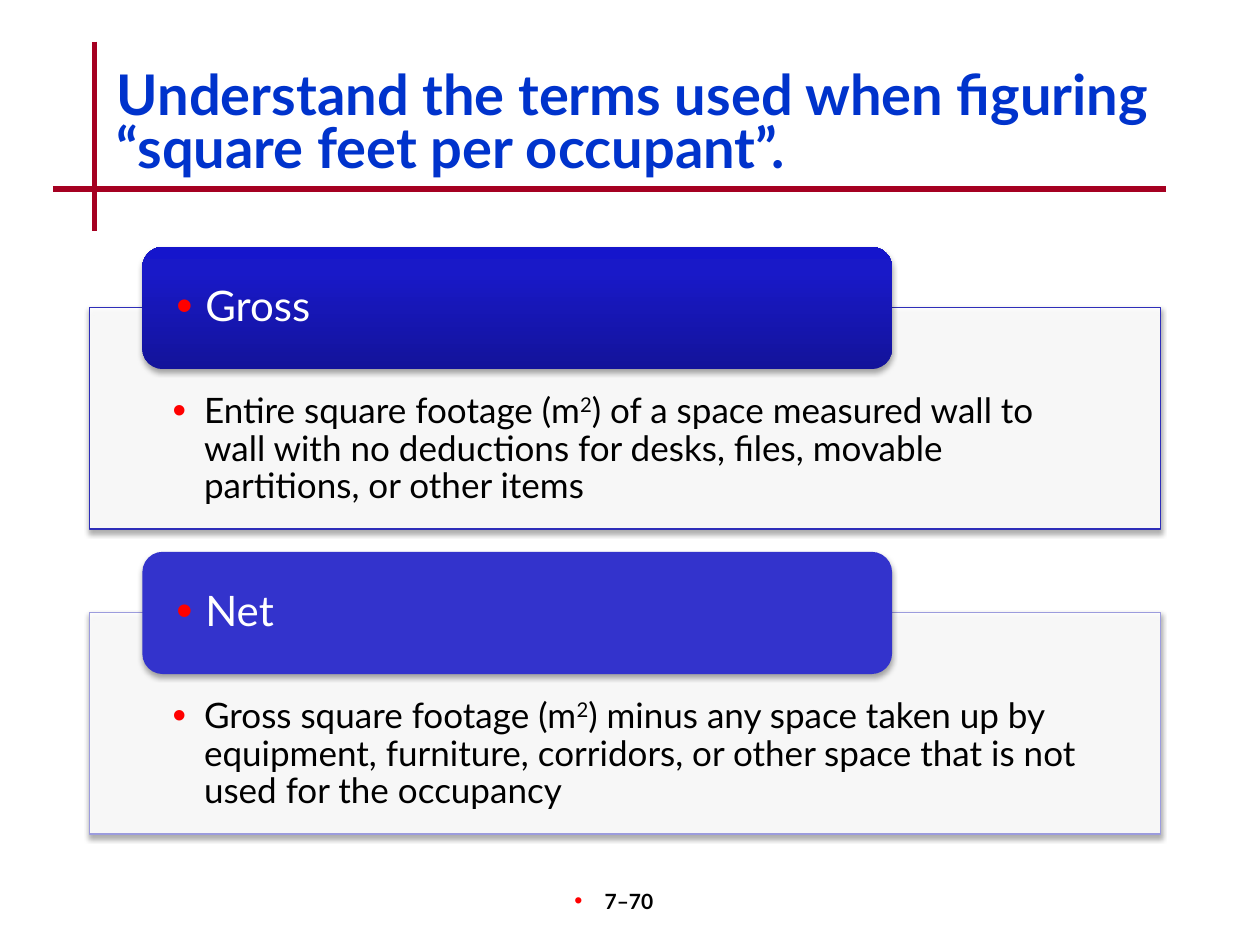
from dataclasses import dataclass

from lxml import etree
from pptx import Presentation
from pptx.dml.color import RGBColor
from pptx.enum.shapes import MSO_CONNECTOR, MSO_SHAPE
from pptx.enum.text import MSO_ANCHOR, PP_ALIGN
from pptx.oxml.ns import qn
from pptx.util import Inches, Pt

STRAIGHT = MSO_CONNECTOR.STRAIGHT
RECTANGLE, ROUNDED = MSO_SHAPE.RECTANGLE, MSO_SHAPE.ROUNDED_RECTANGLE
TOP, MIDDLE = MSO_ANCHOR.TOP, MSO_ANCHOR.MIDDLE
LEFT, CENTER = PP_ALIGN.LEFT, PP_ALIGN.CENTER

FONT = "Lato"
COLORS = {
    "rule": "A50021",
    "title": "0033CC",
    "text": "000000",
    "bullet": "FF0000",
    "white": "FFFFFF",
    "shadow": "000000",
    "gross_border": "2E2EB9",
    "net_border": "9C9CDD",
    "net_header": "3333CC",
}
GROSS_GRADIENT = ((0, "13139A"), (80, "1919C8"), (100, "1515CC"))
SECTION_PITCH = 2.42


@dataclass
class Section:
    heading: str
    before: str
    after: str
    border: str
    header_fill: str | None  # None means the gradient


SECTIONS = [
    Section("Gross", "Entire square footage (m",
            ") of a space measured wall to wall with no deductions for desks, "
            "files, movable partitions, or other items",
            "gross_border", None),
    Section("Net", "Gross square footage (m",
            ") minus any space taken up by equipment, furniture, corridors, "
            "or other space that is not used for the occupancy",
            "net_border", "net_header"),
]


def rgb(name: str) -> RGBColor:
    return RGBColor.from_string(COLORS[name])


def add_child(parent, tag: str, **attributes):
    return etree.SubElement(parent, qn(tag), {k: str(v) for k, v in attributes.items()})


def add_rule(page, start: tuple, end: tuple) -> None:
    rule = page.shapes.add_connector(STRAIGHT, *map(Inches, start + end))
    rule.line.color.rgb = rgb("rule")
    rule.line.width = Pt(3)
    add_child(rule._element.spPr, "a:effectLst")


def add_shadow(shape) -> None:
    shape.shadow.inherit = False
    effects = shape._element.spPr.find(qn("a:effectLst"))
    shadow = add_child(effects, "a:outerShdw", blurRad=Pt(3.1), dist=Pt(1.8),
                       dir=90 * 60000, rotWithShape=0)
    color = add_child(shadow, "a:srgbClr", val=COLORS["shadow"])
    add_child(color, "a:alpha", val=35000)


def add_bullet(para, margin: float, indent: float) -> None:
    properties = para._p.get_or_add_pPr()
    properties.set("marL", str(Inches(margin)))
    properties.set("indent", str(Inches(indent)))
    color = add_child(properties, "a:buClr")
    add_child(color, "a:srgbClr", val=COLORS["bullet"])
    add_child(properties, "a:buSzPct", val=110000)
    add_child(properties, "a:buFont", typeface="Arial")
    add_child(properties, "a:buChar", char="•")


def add_text(page, at: tuple, parts: list, *, size: float, color: str = "text",
             bold: bool = False, align=LEFT, anchor=TOP, spacing: float = 1.0,
             insets: tuple = (0.1, 0.05, 0.1, 0.05), bullet: tuple | None = None) -> None:
    """Add one paragraph; every second part is superscript."""
    box = page.shapes.add_textbox(*map(Inches, at))
    frame = box.text_frame
    frame.word_wrap = True
    frame.vertical_anchor = anchor
    (frame.margin_left, frame.margin_top,
     frame.margin_right, frame.margin_bottom) = map(Inches, insets)
    para = frame.paragraphs[0]
    para.alignment = align
    para.line_spacing = spacing
    if bullet:
        add_bullet(para, *bullet)
    for index, part in enumerate(parts):
        span = para.add_run()
        span.text = part
        span.font.name = FONT
        span.font.size = Pt(size)
        span.font.bold = bold
        span.font.color.rgb = rgb(color)
        if index % 2:
            span.font._element.set("baseline", "30000")


def add_panel(page, at: tuple, border: str) -> None:
    panel = page.shapes.add_shape(RECTANGLE, *map(Inches, at))
    panel.fill.solid()
    panel.fill.fore_color.rgb = rgb("white")
    fill_color = panel._element.spPr.find(qn("a:solidFill")).find(qn("a:srgbClr"))
    add_child(fill_color, "a:alpha", val=90000)
    panel.line.color.rgb = rgb(border)
    panel.line.width = Pt(0.75)
    add_shadow(panel)


def add_header(page, at: tuple, fill: str | None) -> None:
    header = page.shapes.add_shape(ROUNDED, *map(Inches, at))
    if fill:
        header.fill.solid()
        header.fill.fore_color.rgb = rgb(fill)
    else:
        header.fill.gradient()
        header.fill.gradient_angle = 90
        stops = header._element.spPr.find(qn("a:gradFill")).find(qn("a:gsLst"))
        stops.clear()
        for position, color in GROSS_GRADIENT:
            stop = add_child(stops, "a:gs", pos=position * 1000)
            add_child(stop, "a:srgbClr", val=color)
    header.line.fill.background()
    add_shadow(header)


def add_section(page, section: Section, top: float) -> None:
    panel_at = (0.71, top + 0.48, 8.5, 1.76)
    add_panel(page, panel_at, section.border)
    add_text(page, panel_at, [section.before, "2", section.after], size=20,
             spacing=0.9, insets=(0.66, 0.68, 0.66, 0.16), bullet=(0.25, -0.25))
    add_header(page, (1.13, top, 5.95, 0.97), section.header_fill)
    add_text(page, (1.18, top + 0.05, 5.86, 0.87), [section.heading], size=24,
             color="white", anchor=MIDDLE, spacing=0.9,
             insets=(0.22, 0, 0.22, 0), bullet=(0.23, -0.23))


def main() -> None:
    deck = Presentation()
    deck.slide_width, deck.slide_height = Inches(10), Inches(7.5)
    page = deck.slides.add_slide(deck.slide_layouts[6])
    add_rule(page, (0.75, 0.33), (0.75, 1.83))
    add_rule(page, (0.42, 1.5), (9.25, 1.5))
    add_text(page, (3.92, 7, 2.08, 0.5), ["7–70"], size=12, bold=True,
             align=CENTER, bullet=(0.06, -0.24))
    add_text(page, (0.83, 0.5, 8.5, 1),
             ["Understand the terms used when figuring “square feet per occupant”."],
             size=32, color="title", bold=True, anchor=MIDDLE, spacing=0.8)
    for index, section in enumerate(SECTIONS):
        add_section(page, section, 1.96 + index * SECTION_PITCH)
    deck.save("out.pptx")


if __name__ == "__main__":
    main()
